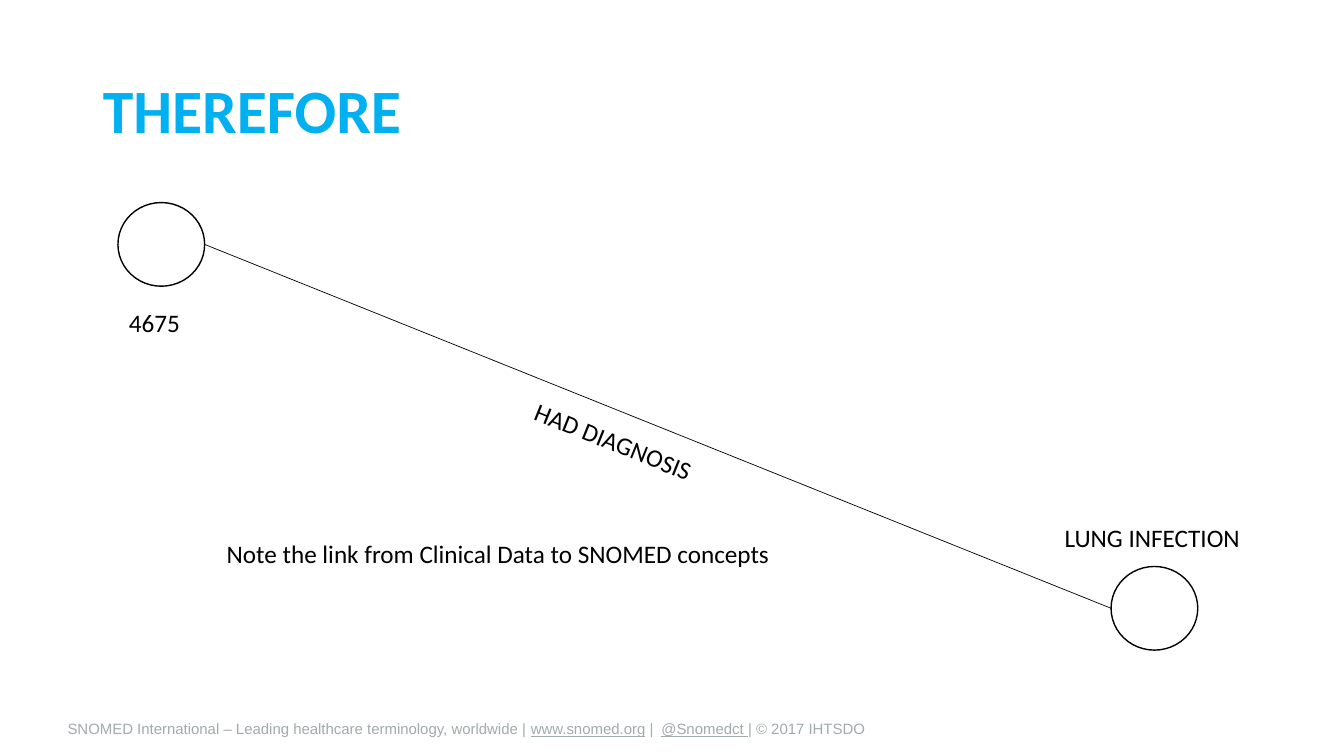
from dataclasses import dataclass

from lxml import etree
from pptx import Presentation
from pptx.dml.color import RGBColor
from pptx.enum.shapes import MSO_CONNECTOR, MSO_SHAPE
from pptx.enum.text import MSO_ANCHOR, PP_ALIGN
from pptx.oxml.ns import qn
from pptx.util import Emu, Pt

OVAL = MSO_SHAPE.OVAL
LINE = MSO_CONNECTOR.STRAIGHT
MIDDLE = MSO_ANCHOR.MIDDLE
LEFT = PP_ALIGN.LEFT
PX = 9144  # EMU in one px, 100 px to the inch


@dataclass(frozen=True)
class Theme:
    blue: str = "00B0F0"
    black: str = "000000"
    white: str = "FFFFFF"
    gray: str = "A2AAAD"
    font: str = "Calibri"
    foot_font: str = "Arial"
    title: float = 44
    body: float = 18
    foot: float = 10.7


THEME = Theme()
SIZE = (1333, 750)
TITLE = ("THEREFORE", (92, 40, 1150, 145))

# Text, box, turn in degrees
LABELS = [
    ("4675", (118, 300, 71, 40), 0),
    ("LUNG INFECTION", (1046, 513, 196, 40), 0),
    ("HAD DIAGNOSIS", (516, 418, 187, 40), 21.9),
    ("Note the link from Clinical Data to SNOMED concepts", (215, 529, 565, 40), 0),
]

# Runs of text and whether each is underlined, then the box
FOOTER = [
    ([("SNOMED International – Leading healthcare terminology, worldwide | ", False),
      ("www.snomed.org", True), (" |", False)], (67, 695, 600, 55)),
    ([("@Snomedct ", True), ("| © 2017 IHTSDO", False)], (656, 695, 267, 55)),
]

NODE = (86, 83)
PATIENT = (117, 201)
DISEASE = (1102, 562)


def emu(box):
    return [Emu(n * PX) for n in box]


def color(code):
    return RGBColor.from_string(code)


def write(shape, runs, size=THEME.body, tint=THEME.black, font=THEME.font,
          bold=False, wrap=False, anchor=None, inset=None, spacing=None):
    """Fill a shape with one left-aligned paragraph of (text, underlined) runs."""
    frame = shape.text_frame
    frame.word_wrap = wrap
    if anchor is not None:
        frame.vertical_anchor = anchor
    if inset is not None:
        frame.margin_left = frame.margin_right = Emu(inset)
        frame.margin_top = frame.margin_bottom = Emu(inset)
    para = frame.paragraphs[0]
    para.alignment = LEFT
    para.line_spacing = spacing
    for text, under in runs:
        run = para.add_run()
        run.text = text
        run.font.name = font
        run.font.size = Pt(size)
        run.font.bold = bold
        run.font.underline = under
        run.font.color.rgb = color(tint)


def add_node(slide, spot):
    node = slide.shapes.add_shape(OVAL, *emu(spot + NODE))
    node.shadow.inherit = False
    node.fill.solid()
    node.fill.fore_color.rgb = color(THEME.white)
    node.line.color.rgb = color(THEME.black)
    node.line.width = Pt(1)
    return node


def add_link(slide, start, end):
    """Join the right side of one node to the left side of another."""
    link = slide.shapes.add_connector(
        LINE,
        start.left + start.width, start.top + start.height // 2,
        end.left, end.top + end.height // 2)
    link.line.color.rgb = color(THEME.black)
    link.line.width = Pt(0.5)
    etree.SubElement(link._element.spPr, qn("a:effectLst"))


def main():
    deck = Presentation()
    deck.slide_width, deck.slide_height = emu(SIZE)
    slide = deck.slides.add_slide(deck.slide_layouts[5])

    for runs, box in FOOTER:
        write(slide.shapes.add_textbox(*emu(box)), runs, size=THEME.foot,
              tint=THEME.gray, font=THEME.foot_font, wrap=True,
              anchor=MIDDLE, inset=0)

    text, box = TITLE
    title = slide.shapes.title
    title.left, title.top, title.width, title.height = emu(box)
    write(title, [(text, False)], size=THEME.title, tint=THEME.blue,
          bold=True, wrap=True, anchor=MIDDLE, spacing=0.9)

    disease = add_node(slide, DISEASE)
    patient = add_node(slide, PATIENT)
    add_link(slide, patient, disease)

    for text, box, turn in LABELS:
        label = slide.shapes.add_textbox(*emu(box))
        label.rotation = turn
        write(label, [(text, False)])

    deck.save("out.pptx")


if __name__ == "__main__":
    main()
